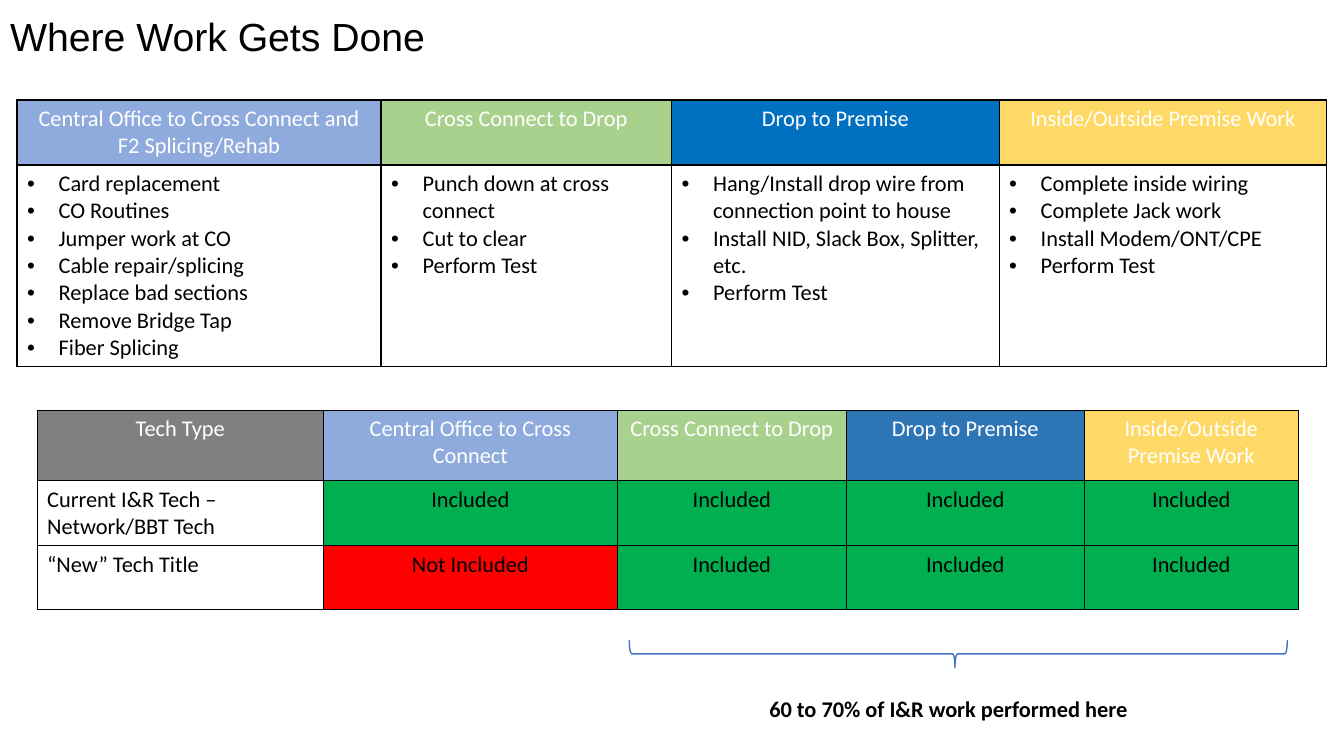
from lxml import etree
from pptx import Presentation
from pptx.dml.color import RGBColor
from pptx.enum.shapes import MSO_SHAPE
from pptx.enum.text import MSO_ANCHOR, MSO_AUTO_SIZE, PP_ALIGN
from pptx.oxml.ns import qn
from pptx.util import Pt

LEFT, CENTER = PP_ALIGN.LEFT, PP_ALIGN.CENTER
MIDDLE = MSO_ANCHOR.MIDDLE
FIT_SHAPE, FIT_NONE = MSO_AUTO_SIZE.SHAPE_TO_FIT_TEXT, MSO_AUTO_SIZE.NONE
LEFT_BRACE = MSO_SHAPE.LEFT_BRACE

BLACK = RGBColor(0x00, 0x00, 0x00)
WHITE = RGBColor(0xFF, 0xFF, 0xFF)
GRAY = RGBColor(0x80, 0x80, 0x80)
PERIWINKLE = RGBColor(0x8F, 0xAA, 0xDC)
SAGE = RGBColor(0xA9, 0xD1, 0x8E)
BLUE = RGBColor(0x00, 0x70, 0xC0)
STEEL = RGBColor(0x2E, 0x75, 0xB6)
GOLD = RGBColor(0xFF, 0xD9, 0x66)
GREEN = RGBColor(0x00, 0xB0, 0x50)
RED = RGBColor(0xFF, 0x00, 0x00)
BRACE_BLUE = RGBColor(0x44, 0x72, 0xC4)

WORK_AREAS = [
    ("Central Office to Cross Connect and F2 Splicing/Rehab", PERIWINKLE,
     ["Card replacement", "CO Routines", "Jumper work at CO", "Cable repair/splicing",
      "Replace bad sections", "Remove Bridge Tap", "Fiber Splicing"]),
    ("Cross Connect to Drop", SAGE,
     ["Punch down at cross connect", "Cut to clear", "Perform Test"]),
    ("Drop to Premise", BLUE,
     ["Hang/Install drop wire from connection point to house",
      "Install NID, Slack Box, Splitter, etc.", "Perform Test"]),
    ("Inside/Outside Premise Work", GOLD,
     ["Complete inside wiring", "Complete Jack work", "Install Modem/ONT/CPE",
      "Perform Test"]),
]
TECH_HEADINGS = [
    ("Tech Type", GRAY),
    ("Central Office to Cross Connect", PERIWINKLE),
    ("Cross Connect to Drop", SAGE),
    ("Drop to Premise", STEEL),
    ("Inside/Outside Premise Work", GOLD),
]
TECH_COVERAGE = [
    ("Current I&R Tech – Network/BBT Tech", [True, True, True, True]),
    ("“New” Tech Title", [False, True, True, True]),
]


class WorkSlide:
    body_font, body_size = "Calibri", 16
    title_font, title_size = "Arial", 28

    def __init__(self, slide):
        self.slide = slide

    def style(self, paragraph, color=BLACK, align=LEFT, bold=False):
        paragraph.alignment = align
        font = paragraph.font
        font.name, font.size, font.bold = self.body_font, Pt(self.body_size), bold
        font.color.rgb = color

    def title(self, text, left, top, width, height):
        heading = self.slide.shapes.title
        heading.left, heading.top = Pt(left), Pt(top)
        heading.width, heading.height = Pt(width), Pt(height)
        frame = heading.text_frame
        frame.text = text
        frame.auto_size, frame.vertical_anchor = FIT_NONE, MIDDLE
        paragraph = frame.paragraphs[0]
        self.style(paragraph)
        paragraph.line_spacing = 0.9
        paragraph.font.name, paragraph.font.size = self.title_font, Pt(self.title_size)

    def table(self, left, top, widths, heights):
        table = self.slide.shapes.add_table(
            len(heights), len(widths), Pt(left), Pt(top),
            Pt(sum(widths)), Pt(sum(heights))).table
        table.first_row = table.horz_banding = False
        for column, width in zip(table.columns, widths):
            column.width = Pt(width)
        for row, height in zip(table.rows, heights):
            row.height = Pt(height)
        return table

    def cell(self, cell, lines, fill=None, color=BLACK, align=CENTER, bulleted=False):
        self.outline(cell)
        if fill is None:
            cell.fill.background()
        else:
            cell.fill.solid()
            cell.fill.fore_color.rgb = fill
        cell.text = "\n".join(lines)
        for paragraph in cell.text_frame.paragraphs:
            if bulleted:
                self.bullet(paragraph)
            self.style(paragraph, color, align)

    def outline(self, cell):
        properties = cell._tc.get_or_add_tcPr()
        for side in ("a:lnL", "a:lnR", "a:lnT", "a:lnB"):
            line = etree.SubElement(properties, qn(side), w=str(Pt(1)))
            solid = etree.SubElement(line, qn("a:solidFill"))
            etree.SubElement(solid, qn("a:srgbClr"), val=str(BLACK))

    def bullet(self, paragraph, indent=22.5):
        properties = paragraph._p.get_or_add_pPr()
        properties.set("marL", str(Pt(indent)))
        properties.set("indent", str(-Pt(indent)))
        etree.SubElement(properties, qn("a:buFont"), typeface="Arial")
        etree.SubElement(properties, qn("a:buChar"), char="•")

    def brace_below(self, left, top, width, height):
        """Draw a brace that opens upward, within the given bounds."""
        brace = self.slide.shapes.add_shape(
            LEFT_BRACE, Pt(left + (width - height) / 2), Pt(top - (width - height) / 2),
            Pt(height), Pt(width))
        brace.rotation = 270
        brace.adjustments[0], brace.adjustments[1] = 0.083, 0.495
        brace.shadow.inherit = False
        brace.fill.background()
        brace.line.color.rgb, brace.line.width = BRACE_BLUE, Pt(1)

    def caption(self, text, left, top, width, height):
        frame = self.slide.shapes.add_textbox(
            Pt(left), Pt(top), Pt(width), Pt(height)).text_frame
        frame.word_wrap, frame.auto_size = True, FIT_SHAPE
        frame.text = text
        self.style(frame.paragraphs[0], align=CENTER, bold=True)


def main():
    deck = Presentation()
    deck.slide_width, deck.slide_height = Pt(960), Pt(540)
    page = WorkSlide(deck.slides.add_slide(deck.slide_layouts[5]))
    page.title("Where Work Gets Done", 0, 1.5, 828, 52)

    areas = page.table(12.2, 71.5, [260, 207.5, 234, 234], [45.5, 142])
    for column, (area, fill, tasks) in enumerate(WORK_AREAS):
        page.cell(areas.cell(0, column), [area], fill, WHITE)
        page.cell(areas.cell(1, column), tasks, align=LEFT, bulleted=True)

    coverage = page.table(26.5, 293, [204.5, 210, 163.5, 170, 153], [50.5, 45.5, 45.5])
    for column, (heading, fill) in enumerate(TECH_HEADINGS):
        page.cell(coverage.cell(0, column), [heading], fill, WHITE)
    for row, (tech, included) in enumerate(TECH_COVERAGE, start=1):
        page.cell(coverage.cell(row, 0), [tech], align=LEFT)
        for column, covered in enumerate(included, start=1):
            label, fill = ("Included", GREEN) if covered else ("Not Included", RED)
            page.cell(coverage.cell(row, column), [label], fill)

    page.brace_below(449.5, 457, 470, 20)
    page.caption("60 to 70% of I&R work performed here", 449.5, 493, 456, 26.5)
    deck.save("out.pptx")


if __name__ == "__main__":
    main()
